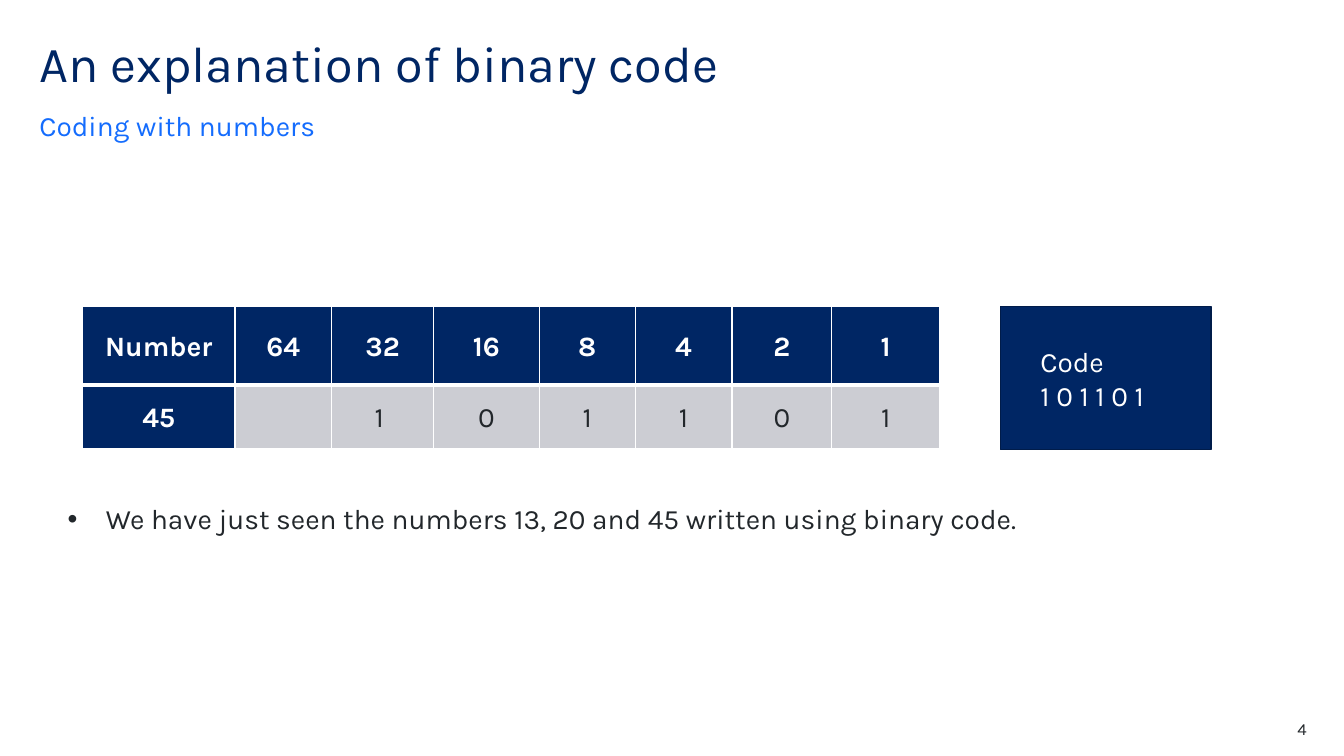
from pptx import Presentation
from pptx.dml.color import RGBColor
from pptx.enum.shapes import MSO_SHAPE as Shape
from pptx.enum.text import MSO_ANCHOR as Anchor, PP_ALIGN as Align
from pptx.oxml.ns import qn
from pptx.util import Inches, Pt
from lxml.etree import SubElement as Sub

FONT = "Karla"
NAVY, BLUE, INK = "002664", "146CFD", "22272B"
GREY, WHITE, EDGE = "CCCDD3", "FFFFFF", "001C4A"
WIDTHS = [1.51, 0.96, 1.01, 1.05, 0.95, 0.96, 0.99, 1.07]
HEIGHTS = [0.78, 0.63]
ROWS = [
    ["Number", "64", "32", "16", "8", "4", "2", "1"],
    ["45", "", "1 ", "0", "1", "1", "0", "1"],
]


def color(code):
    """Turn a hex string into a colour."""
    return RGBColor.from_string(code)


def add_run(para, text, size, code, bold=False):
    """Add one styled run to a paragraph."""
    run = para.add_run()
    run.text = text
    font = run.font
    font.name, font.size, font.bold = FONT, Pt(size), bold
    font.color.rgb = color(code)


def indent(para, left, first=0, mark=None):
    """Indent a paragraph and give it a bullet if one is named."""
    props = para._p.get_or_add_pPr()
    props.set("marL", str(Inches(left)))
    props.set("indent", str(Inches(first)))
    if mark:
        Sub(props, qn("a:buFont"), typeface="Arial")
        Sub(props, qn("a:buChar"), char=mark)


def add_text(slide, box, text, size, code, anchor=Anchor.TOP):
    """Add a text box without margins and return its paragraph."""
    frame = slide.shapes.add_textbox(*map(Inches, box)).text_frame
    frame.word_wrap = True
    frame.vertical_anchor = anchor
    frame.margin_left = frame.margin_right = 0
    frame.margin_top = frame.margin_bottom = 0
    para = frame.paragraphs[0]
    add_run(para, text, size, code)
    return para


def add_edge(cell, side, width):
    """Draw one white border of a cell."""
    props = cell._tc.get_or_add_tcPr()
    line = Sub(props, qn(f"a:ln{side}"), w=str(Pt(width)))
    fill = Sub(line, qn("a:solidFill"))
    Sub(fill, qn("a:srgbClr"), val=WHITE)


def fill_cell(cell, text, row, head):
    """Style a cell and write its text."""
    for side in "LRTB":
        thick = side == "TB"[1 - row]
        add_edge(cell, side, 3 if thick else 1)
    cell.fill.solid()
    cell.fill.fore_color.rgb = color(NAVY if head else GREY)
    cell.vertical_anchor = Anchor.MIDDLE
    cell.margin_left = cell.margin_right = Inches(0.02)
    cell.margin_top = cell.margin_bottom = Inches(0.02)
    para = cell.text_frame.paragraphs[0]
    para.alignment = Align.CENTER
    para.line_spacing, para.space_after = 1.07, Pt(8)
    if text:
        add_run(para, text, 20, WHITE if head else INK, head)
    else:
        para.font.size = Pt(20)


def add_grid(slide, left, top):
    """Add the table of binary places."""
    size = map(Inches, (left, top, sum(WIDTHS), sum(HEIGHTS)))
    table = slide.shapes.add_table(len(ROWS), len(WIDTHS), *size).table
    for col, width in zip(table.columns, WIDTHS):
        col.width = Inches(width)
    for r, (height, texts) in enumerate(zip(HEIGHTS, ROWS)):
        table.rows[r].height = Inches(height)
        for c, text in enumerate(texts):
            fill_cell(table.cell(r, c), text, r, r == 0 or c == 0)


def add_card(slide, box, lines):
    """Add a navy box with indented lines."""
    card = slide.shapes.add_shape(Shape.RECTANGLE, *map(Inches, box))
    card.shadow.inherit = False
    card.fill.solid()
    card.fill.fore_color.rgb = color(NAVY)
    card.line.color.rgb = color(EDGE)
    card.line.width = Pt(1)
    frame = card.text_frame
    frame.word_wrap = True
    frame.vertical_anchor = Anchor.MIDDLE
    for i, text in enumerate(lines):
        para = frame.add_paragraph() if i else frame.paragraphs[0]
        para.alignment = Align.LEFT
        indent(para, 0.3)
        add_run(para, text, 20, WHITE)


def main():
    """Build and save the slide."""
    deck = Presentation()
    deck.slide_width, deck.slide_height = Inches(13.33), Inches(7.5)
    slide = deck.slides.add_slide(deck.slide_layouts[6])
    title = add_text(slide, (0.39, 0.39, 11.02, 0.6),
                     "An explanation of binary code", 36, NAVY)
    title.line_spacing = 0.9
    lead = add_text(slide, (0.39, 1.07, 11.02, 0.34),
                    "Coding with numbers", 20, BLUE, Anchor.BOTTOM)
    lead.space_after = Pt(12)
    add_grid(slide, 0.82, 3.04)
    add_card(slide, (9.92, 3.04, 2.09, 1.42), ["Code", "1 0 1 1 0 1"])
    note = add_text(
        slide, (0.67, 4.98, 11.58, 0.63),
        "We have just seen the numbers 13, 20 and 45 written using binary code.",
        20, INK)
    indent(note, 0.38, -0.38, "•")
    page = add_text(slide, (12.17, 7.13, 0.79, 0.2), "4", 12, INK)
    page.alignment = Align.RIGHT
    deck.save("out.pptx")


if __name__ == "__main__":
    main()
